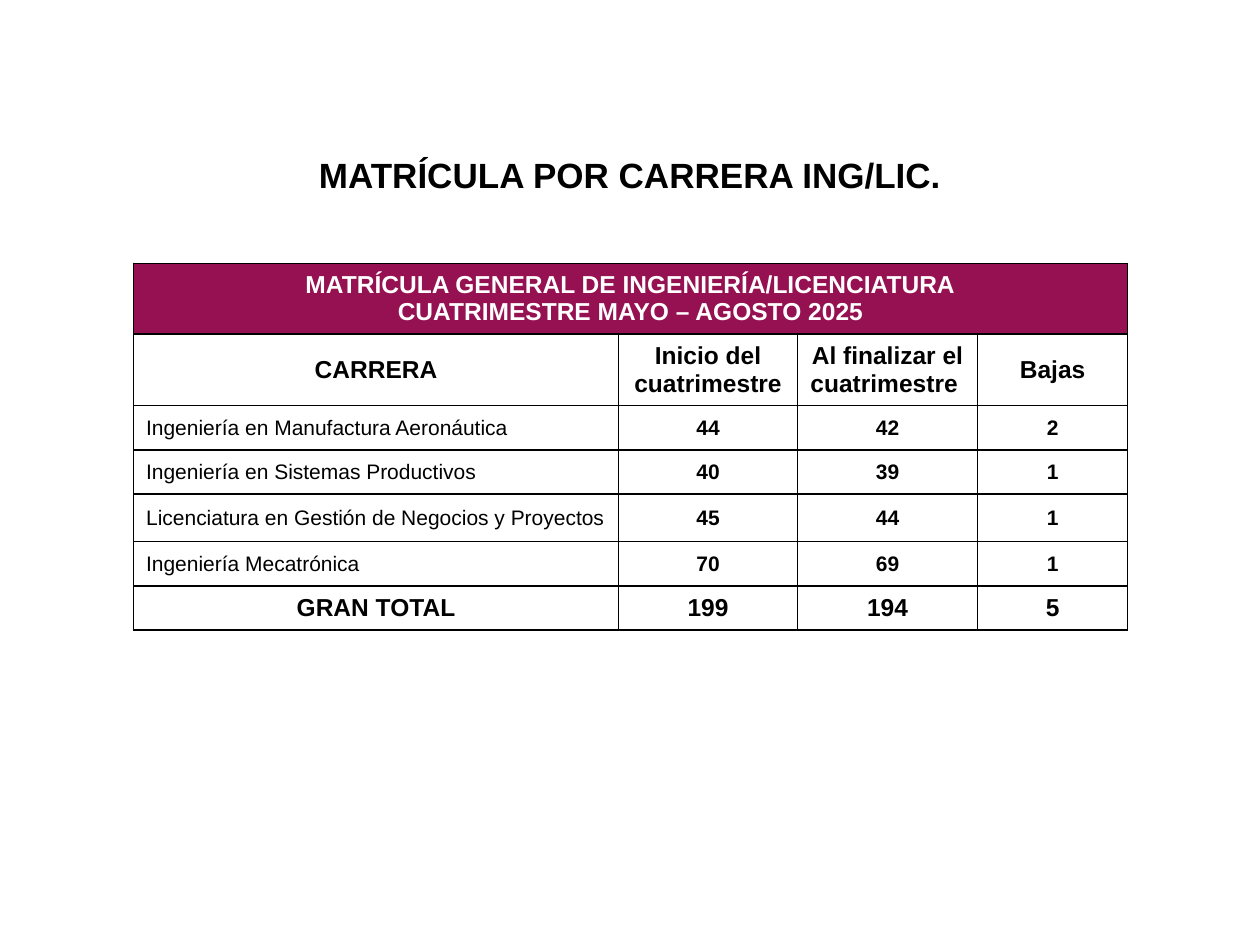
from lxml import etree
from pptx import Presentation
from pptx.dml.color import RGBColor
from pptx.enum.text import MSO_ANCHOR, MSO_AUTO_SIZE, PP_ALIGN
from pptx.oxml.ns import qn
from pptx.util import Inches, Pt

CENTER, LEFT = PP_ALIGN.CENTER, PP_ALIGN.LEFT
MIDDLE = MSO_ANCHOR.MIDDLE
GROW = MSO_AUTO_SIZE.SHAPE_TO_FIT_TEXT

FONT = "Arial"
COLORS = {"banner": "961151", "paper": "FFFFFF", "ink": "000000"}

BANNER = ["MATRÍCULA GENERAL DE INGENIERÍA/LICENCIATURA",
          "CUATRIMESTRE MAYO – AGOSTO 2025"]
HEADINGS = ["CARRERA", "Inicio del cuatrimestre ",
            "Al finalizar el cuatrimestre ", "Bajas"]
CAREERS = [
    ("Ingeniería en Manufactura Aeronáutica", 44, 42, 2),
    ("Ingeniería en Sistemas Productivos", 40, 39, 1),
    ("Licenciatura en Gestión de Negocios y Proyectos", 45, 44, 1),
    ("Ingeniería Mecatrónica", 70, 69, 1),
]
TOTALS = ("GRAN TOTAL", 199, 194, 5)
COLUMN_WIDTHS = [3.85, 1.42, 1.43, 1.19]
ROW_HEIGHTS = [0.56, 0.57, 0.35, 0.35, 0.38, 0.35, 0.35]


def write_lines(frame, lines, size, color="ink", bold=True, align=CENTER):
    for index, line in enumerate(lines):
        paragraph = frame.paragraphs[0] if index == 0 else frame.add_paragraph()
        paragraph.alignment = align
        run = paragraph.add_run()
        run.text = line
        run.font.name = FONT
        run.font.size = Pt(size)
        run.font.bold = bold
        run.font.color.rgb = RGBColor.from_string(COLORS[color])


def add_borders(cell):
    properties = cell._tc.get_or_add_tcPr()
    for side in ("a:lnL", "a:lnR", "a:lnT", "a:lnB"):
        border = etree.SubElement(properties, qn(side), w=str(Pt(1)))
        fill = etree.SubElement(border, qn("a:solidFill"))
        etree.SubElement(fill, qn("a:srgbClr"), val=COLORS["ink"])


def style_cell(cell, fill):
    add_borders(cell)
    cell.fill.solid()
    cell.fill.fore_color.rgb = RGBColor.from_string(COLORS[fill])
    cell.vertical_anchor = MIDDLE


def add_title(slide, title):
    box = slide.shapes.add_textbox(Inches(2.01), Inches(1.17), Inches(5.98), Inches(0.44))
    box.text_frame.word_wrap = True
    box.text_frame.auto_size = GROW
    write_lines(box.text_frame, [title], 20)


def add_enrollment_table(slide):
    table = slide.shapes.add_table(
        len(ROW_HEIGHTS), len(COLUMN_WIDTHS), Inches(1.06), Inches(2.09),
        Inches(sum(COLUMN_WIDTHS)), Inches(sum(ROW_HEIGHTS))).table
    table.first_row = table.horz_banding = False
    for column, width in zip(table.columns, COLUMN_WIDTHS):
        column.width = Inches(width)
    for row, height in zip(table.rows, ROW_HEIGHTS):
        row.height = Inches(height)

    for cell in table.rows[0].cells:
        style_cell(cell, "banner")
    banner = table.cell(0, 0)
    banner.merge(table.cell(0, len(COLUMN_WIDTHS) - 1))
    write_lines(banner.text_frame, BANNER, 14, "paper")

    for row_index, values in enumerate([HEADINGS, *CAREERS, TOTALS], start=1):
        is_career = values in CAREERS
        for column_index, value in enumerate(values):
            cell = table.cell(row_index, column_index)
            style_cell(cell, "paper")
            is_name = is_career and column_index == 0
            write_lines(cell.text_frame, [str(value)], 12 if is_career else 14,
                        bold=not is_name, align=LEFT if is_name else CENTER)


def main():
    presentation = Presentation()
    presentation.slide_width = Inches(10)
    presentation.slide_height = Inches(7.5)
    slide = presentation.slides.add_slide(presentation.slide_layouts[6])
    add_enrollment_table(slide)
    add_title(slide, "MATRÍCULA POR CARRERA ING/LIC.")
    presentation.save("out.pptx")


if __name__ == "__main__":
    main()
